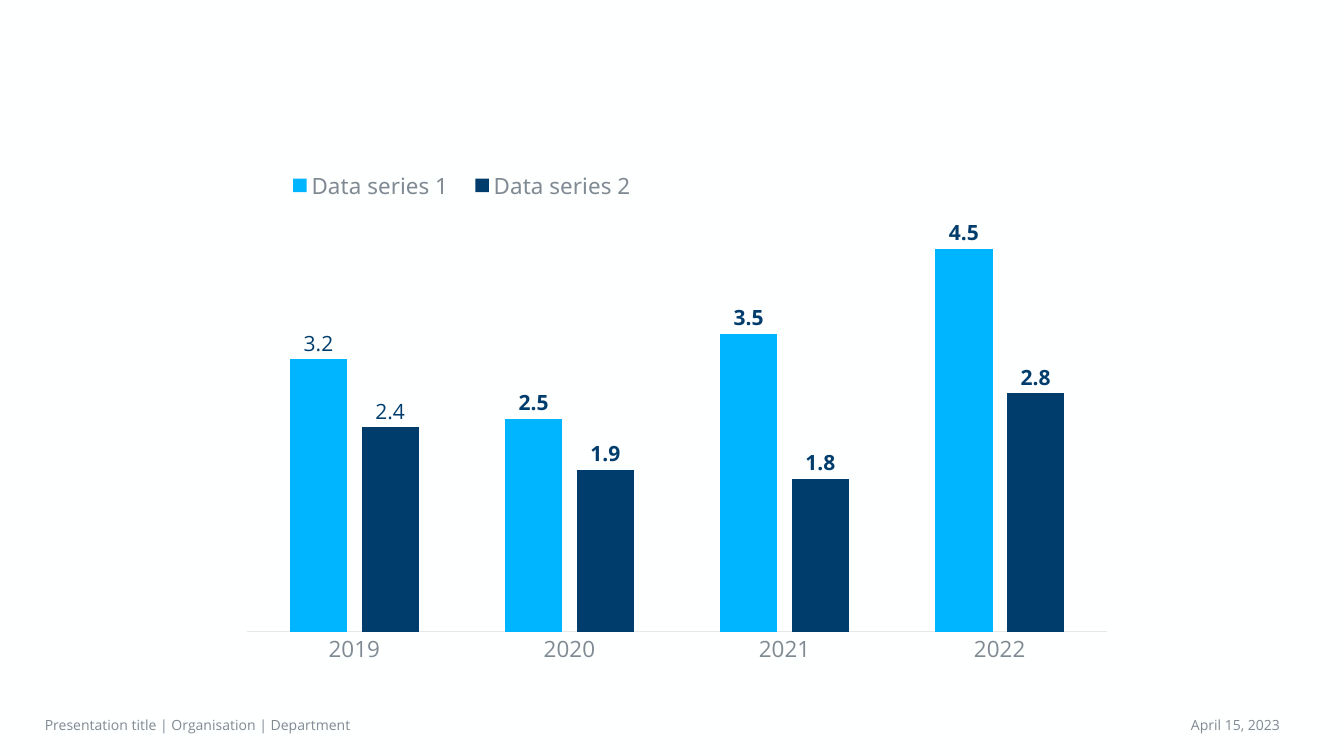
from dataclasses import dataclass

from lxml import etree
from pptx import Presentation
from pptx.chart.chart import Chart
from pptx.chart.data import CategoryChartData
from pptx.dml.color import RGBColor
from pptx.enum.chart import XL_CHART_TYPE, XL_LABEL_POSITION, XL_LEGEND_POSITION, XL_TICK_MARK
from pptx.enum.text import MSO_ANCHOR, PP_ALIGN
from pptx.oxml.ns import qn
from pptx.slide import Slide
from pptx.text.text import Font
from pptx.util import Inches, Pt

CLUSTERED = XL_CHART_TYPE.COLUMN_CLUSTERED
OUTSIDE_END = XL_LABEL_POSITION.OUTSIDE_END
LEGEND_TOP = XL_LEGEND_POSITION.TOP
NO_TICKS = XL_TICK_MARK.NONE
MIDDLE = MSO_ANCHOR.MIDDLE
LEFT, RIGHT = PP_ALIGN.LEFT, PP_ALIGN.RIGHT


@dataclass(frozen=True)
class Theme:
    font: str = "Open Sans"
    legend_font: str = "Noto Sans"
    background: str = "FEFFFF"
    sky: str = "00B5FF"
    navy: str = "003D6D"
    grey: str = "808A93"
    rule: str = "E6E8EA"
    axis_size: int = 32
    label_size: int = 30
    footer_size: int = 20


@dataclass(frozen=True)
class Box:
    left: float
    top: float
    width: float
    height: float

    def lengths(self) -> tuple:
        return tuple(Inches(n) for n in (self.left, self.top, self.width, self.height))


@dataclass(frozen=True)
class Series:
    name: str
    values: tuple
    color: str


@dataclass(frozen=True)
class FooterItem:
    text: str
    box: Box
    align: PP_ALIGN


THEME = Theme()
YEARS = ("2019", "2020", "2021", "2022")
SERIES = (
    Series("Data series 1", (3.2, 2.5, 3.5, 4.5), THEME.sky),
    Series("Data series 2", (2.4, 1.9, 1.8, 2.8), THEME.navy),
)
CHART_BOX = Box(4.54, 3.06, 17.78, 10.3)
PLOT_SHARE = Box(0.02, 0.1, 0.96, 0.82)
LEGEND_SHARE = Box(0.05, 0.03, 0.42, 0.06)
FOOTER = (
    FooterItem("Presentation title | Organisation | Department", Box(0.79, 14.07, 15.6, 0.63), LEFT),
    FooterItem("April 15, 2023", Box(20.77, 14.07, 4.72, 0.63), RIGHT),
)


def format_font(font: Font, size: int, color: str, name: str = THEME.font, bold: bool = False) -> None:
    font.name = name
    font.size = Pt(size)
    font.bold = bold
    font.color.rgb = RGBColor.from_string(color)


def add_text(slide: Slide, text: str, box: Box, *, size: int, color: str, align: PP_ALIGN) -> None:
    frame = slide.shapes.add_textbox(*box.lengths()).text_frame
    frame.word_wrap = True
    frame.vertical_anchor = MIDDLE
    paragraph = frame.paragraphs[0]
    paragraph.alignment = align
    run = paragraph.add_run()
    run.text = text
    format_font(run.font, size, color)


def build_layout(share: Box, inner: bool = False) -> etree._Element:
    layout = etree.Element(qn("c:layout"))
    manual = etree.SubElement(layout, qn("c:manualLayout"))
    settings = [("layoutTarget", "inner")] if inner else []
    settings += [("xMode", "edge"), ("yMode", "edge")]
    settings += [("x", share.left), ("y", share.top), ("w", share.width), ("h", share.height)]
    for tag, value in settings:
        etree.SubElement(manual, qn(f"c:{tag}")).set("val", str(value))
    return layout


def place_parts(chart: Chart) -> None:
    plot_area = chart.element.find(".//" + qn("c:plotArea"))
    legend = chart.element.find(".//" + qn("c:legend"))
    for part in (plot_area, legend):
        for automatic in part.findall(qn("c:layout")):
            part.remove(automatic)
    plot_area.insert(0, build_layout(PLOT_SHARE, inner=True))
    legend.find(qn("c:legendPos")).addnext(build_layout(LEGEND_SHARE))


def format_axes(chart: Chart) -> None:
    years = chart.category_axis
    years.major_tick_mark = years.minor_tick_mark = NO_TICKS
    years.format.line.color.rgb = RGBColor.from_string(THEME.rule)
    years.format.line.width = Pt(0.75)
    format_font(years.tick_labels.font, THEME.axis_size, THEME.grey)
    scale = chart.value_axis
    scale.minimum_scale, scale.maximum_scale = 0, 5
    scale.has_major_gridlines = False
    scale.visible = False


def format_series(chart: Chart) -> None:
    plot = chart.plots[0]
    plot.gap_width = 150
    plot.overlap = -25
    plot.vary_by_categories = False
    for columns, series in zip(plot.series, SERIES):
        columns.format.fill.solid()
        columns.format.fill.fore_color.rgb = RGBColor.from_string(series.color)
        labels = columns.data_labels
        labels.show_value = True
        labels.position = OUTSIDE_END
        format_font(labels.font, THEME.label_size, THEME.navy, bold=True)
        first_label = columns.points[0].data_label
        format_font(first_label.font, THEME.label_size, THEME.navy)
        first_label.position = OUTSIDE_END


def add_column_chart(slide: Slide) -> None:
    data = CategoryChartData()
    data.categories = YEARS
    for series in SERIES:
        data.add_series(series.name, series.values)
    chart = slide.shapes.add_chart(CLUSTERED, *CHART_BOX.lengths(), data).chart
    chart.has_title = False
    chart.has_legend = True
    chart.legend.position = LEGEND_TOP
    chart.legend.include_in_layout = False
    format_font(chart.legend.font, THEME.axis_size, THEME.grey, THEME.legend_font)
    format_axes(chart)
    format_series(chart)
    place_parts(chart)


def main() -> None:
    presentation = Presentation()
    presentation.slide_width = Inches(26.66)
    presentation.slide_height = Inches(15)
    slide = presentation.slides.add_slide(presentation.slide_layouts[6])
    slide.background.fill.solid()
    slide.background.fill.fore_color.rgb = RGBColor.from_string(THEME.background)
    add_column_chart(slide)
    for item in FOOTER:
        add_text(slide, item.text, item.box, size=THEME.footer_size, color=THEME.grey, align=item.align)
    presentation.save("out.pptx")


if __name__ == "__main__":
    main()
